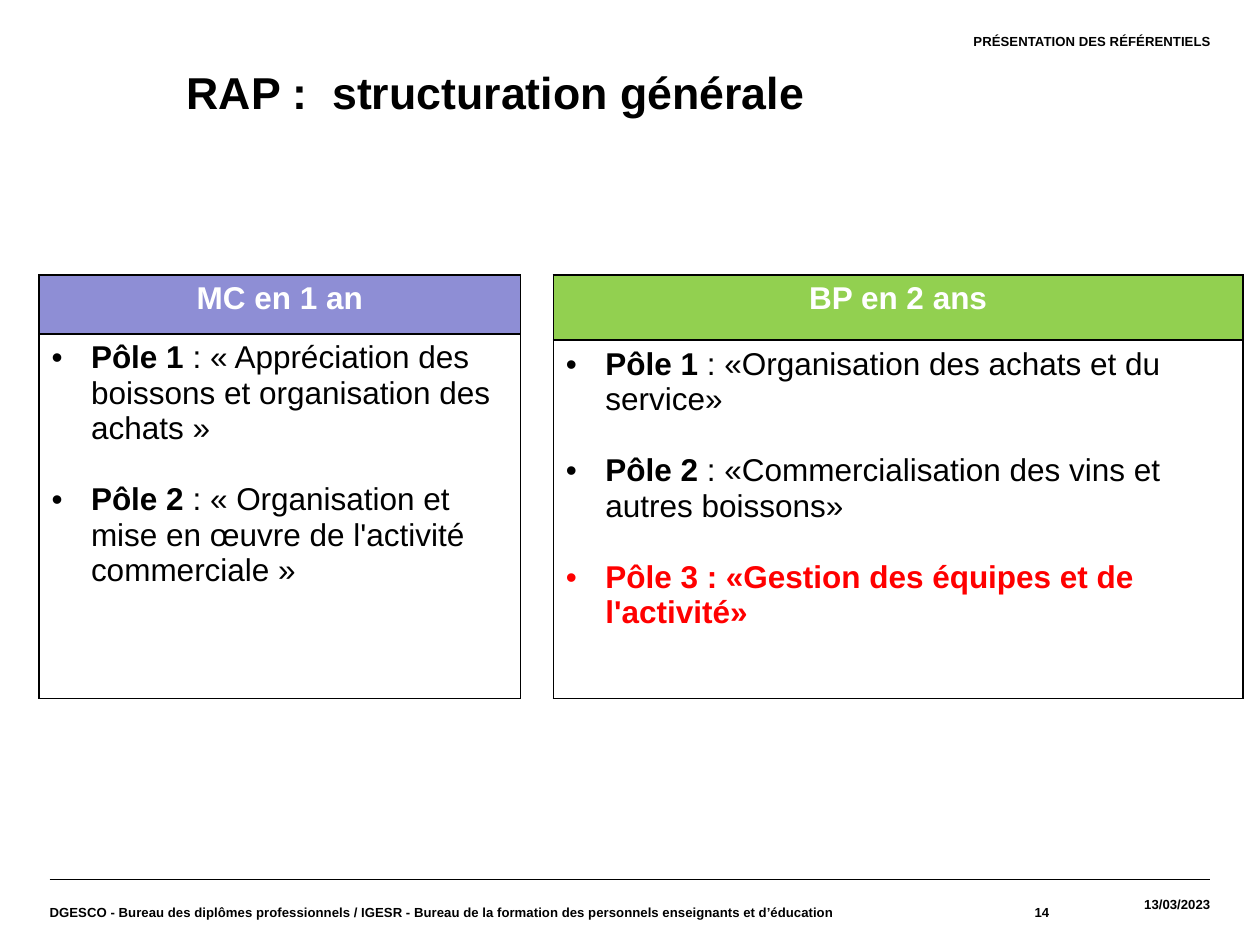
from dataclasses import dataclass

from lxml import etree
from pptx import Presentation
from pptx.dml.color import RGBColor
from pptx.enum import shapes, text
from pptx.oxml import ns
from pptx.util import Pt


@dataclass(frozen=True)
class Theme:
    face: str = "Arial"
    black: str = "000000"
    white: str = "FFFFFF"
    red: str = "FF0000"
    violet: str = "8E8ED5"
    green: str = "92D050"
    small: float = 7.5
    body: float = 18
    title: float = 25.5


@dataclass(frozen=True)
class Note:
    words: str
    box: tuple
    align: text.PP_ALIGN = text.PP_ALIGN.RIGHT
    anchor: text.MSO_ANCHOR = text.MSO_ANCHOR.MIDDLE


@dataclass(frozen=True)
class Pole:
    lead: str
    rest: str = ""
    color: str = Theme.black


@dataclass(frozen=True)
class Panel:
    head: str
    fill: str
    left: float
    width: float
    top_row: float
    poles: tuple


T = Theme()
TOP, TALL = 157.2, 241.9       # both panels
INDENT, GAP = 22.5, 20.7       # bullet indent, one body line between poles
EDGE, END, FOOT = 28.35, 691.65, 502.5

NOTES = (
    Note("PRÉSENTATION DES RÉFÉRENTIELS", (260.8, 18.9, 430.85, 37.4),
         anchor=text.MSO_ANCHOR.TOP),
    Note("13/03/2023", (599.65, FOOT - 4.3, 92, 37.5)),
    Note("14", (493.2, FOOT, 106.4, 37.5)),
    Note("DGESCO - Bureau des diplômes professionnels / IGESR - Bureau de la "
         "formation des personnels enseignants et d’éducation",
         (EDGE, FOOT, 464.85, 37.5), text.PP_ALIGN.LEFT),
)

PANELS = (
    Panel("MC en 1 an", T.violet, 22.3, 275.2, 33.6, (
        Pole("Pôle 1 ", ": « Appréciation des boissons et organisation des achats »"),
        Pole("Pôle 2 ", ": « Organisation et mise en œuvre de l'activité commerciale »"),
    )),
    Panel("BP en 2 ans", T.green, 316.2, 394, 37.2, (
        Pole("Pôle 1", " : «Organisation des achats et du service»"),
        Pole("Pôle 2", " : «Commercialisation des vins et autres boissons»"),
        Pole("Pôle 3 : «Gestion des équipes et de l'activité»", color=T.red),
    )),
)


def put(obj, **vals) -> None:
    for key, val in vals.items():
        setattr(obj, key, val)


def style(font, size: float, color: str = T.black, bold: bool = True) -> None:
    put(font, name=T.face, size=Pt(size), bold=bold)
    font.color.rgb = RGBColor.from_string(color)


def frame(tf, anchor) -> None:
    put(tf, margin_left=0, margin_right=0, margin_top=0, margin_bottom=0,
        word_wrap=True, vertical_anchor=anchor)


def add_note(slide, note: Note) -> None:
    tf = slide.shapes.add_textbox(*map(Pt, note.box)).text_frame
    frame(tf, note.anchor)
    para = tf.paragraphs[0]
    put(para, text=note.words, alignment=note.align)
    style(para.runs[0].font, T.small)


def set_cell(cell, fill: str) -> None:
    cell.fill.solid()
    cell.fill.fore_color.rgb = RGBColor.from_string(fill)
    props = cell._tc.get_or_add_tcPr()
    for i, side in enumerate("LRTB"):
        line = etree.Element(ns.qn(f"a:ln{side}"), w=str(Pt(1)))
        paint = etree.SubElement(line, ns.qn("a:solidFill"))
        etree.SubElement(paint, ns.qn("a:srgbClr"), val=T.black)
        props.insert(i, line)


def add_pole(para, pole: Pole) -> None:
    props = para._p.get_or_add_pPr()
    put_ind = {"marL": Pt(INDENT), "indent": -Pt(INDENT)}
    for key, val in put_ind.items():
        props.set(key, str(val))
    etree.SubElement(props, ns.qn("a:buFont"), typeface=T.face)
    etree.SubElement(props, ns.qn("a:buChar"), char="•")
    for words, bold in ((pole.lead, True), (pole.rest, False)):
        if words:
            run = para.add_run()
            run.text = words
            style(run.font, T.body, pole.color, bold)


def add_panel(slide, panel: Panel) -> None:
    table = slide.shapes.add_table(
        2, 1, Pt(panel.left), Pt(TOP), Pt(panel.width), Pt(TALL)).table
    put(table, first_row=False, horz_banding=False)
    table.rows[0].height = Pt(panel.top_row)
    table.rows[1].height = Pt(TALL - panel.top_row)
    head, body = table.cell(0, 0), table.cell(1, 0)
    set_cell(head, panel.fill)
    set_cell(body, T.white)
    para = head.text_frame.paragraphs[0]
    put(para, text=panel.head, alignment=text.PP_ALIGN.CENTER)
    style(para.runs[0].font, T.body, T.white)
    tf = body.text_frame
    for i, pole in enumerate(panel.poles):
        para = tf.add_paragraph() if i else tf.paragraphs[0]
        if i:
            para.space_before = Pt(GAP)
        add_pole(para, pole)


def add_title(slide) -> None:
    title = slide.shapes.title
    put(title, left=Pt(106.6), top=Pt(37), width=Pt(597.6), height=Pt(31.7))
    frame(title.text_frame, text.MSO_ANCHOR.TOP)
    para = title.text_frame.paragraphs[0]
    put(para, text="RAP :  structuration générale", alignment=text.PP_ALIGN.LEFT)
    put(para, space_before=Pt(0))
    style(para.runs[0].font, T.title)


def add_rule(slide) -> None:
    rule = slide.shapes.add_connector(
        shapes.MSO_CONNECTOR.STRAIGHT, Pt(EDGE), Pt(FOOT), Pt(END), Pt(FOOT))
    rule.line.width = Pt(0.8)
    rule.line.color.rgb = RGBColor.from_string(T.black)
    etree.SubElement(rule._element.spPr, ns.qn("a:effectLst"))


def main() -> None:
    deck = Presentation()
    put(deck, slide_width=Pt(720), slide_height=Pt(540))
    slide = deck.slides.add_slide(deck.slide_layouts[5])
    # Footer rule, header and footer notes
    add_rule(slide)
    for note in NOTES:
        add_note(slide, note)
    # Side-by-side panels
    for panel in PANELS:
        add_panel(slide, panel)
    add_title(slide)
    deck.save("out.pptx")


if __name__ == "__main__":
    main()
